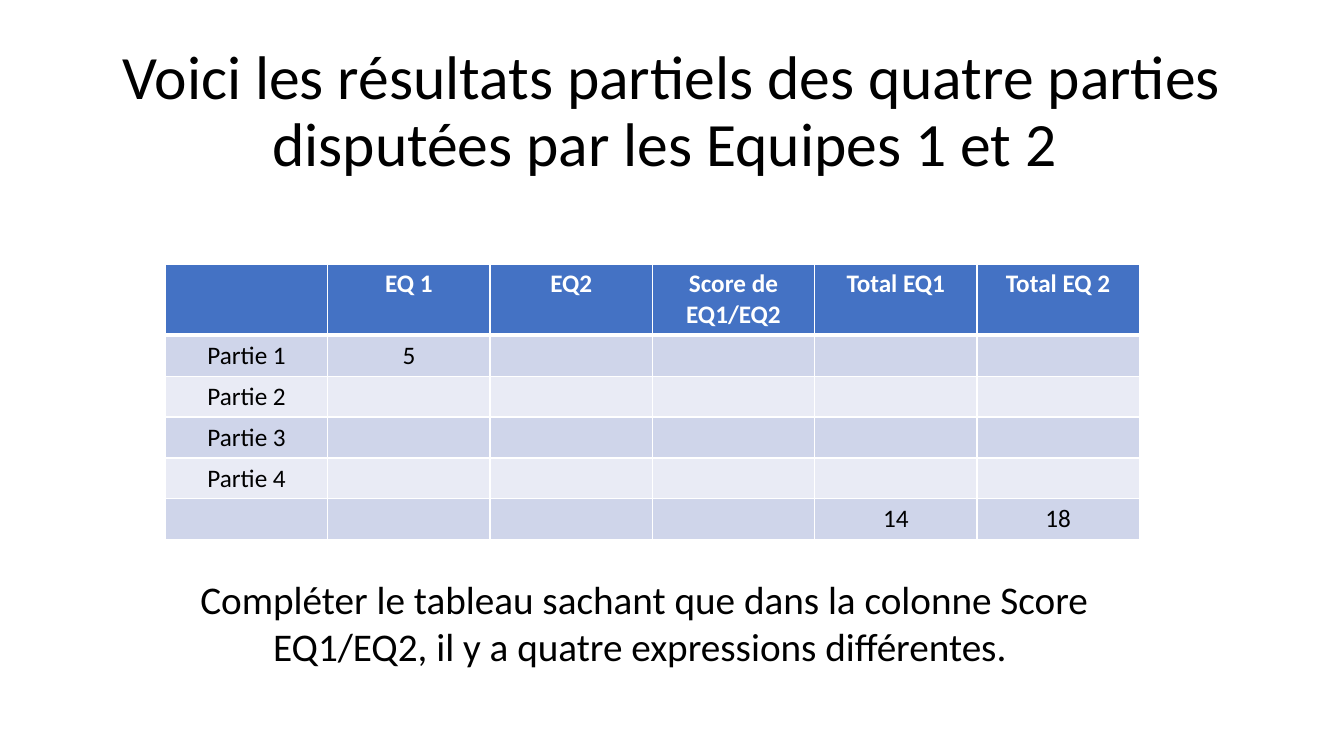
from lxml import etree
from pptx import Presentation
from pptx.dml.color import RGBColor
from pptx.enum.text import MSO_ANCHOR, PP_ALIGN
from pptx.oxml.ns import qn
from pptx.util import Cm, Pt

CENTER = PP_ALIGN.CENTER
TOP, MIDDLE = MSO_ANCHOR.TOP, MSO_ANCHOR.MIDDLE
BLACK, WHITE, HEADER_BLUE = "000000", "FFFFFF", "4472C4"
BANDS = ("CFD5EA", "E9EBF5")
HEADER_HEIGHT, ROW_HEIGHT = 1.8, 1.03

SCORES = [
    ["", "EQ 1", "EQ2", "Score de EQ1/EQ2", "Total EQ1", "Total EQ 2"],
    ["Partie 1", "5", "", "", "", ""],
    ["Partie 2", "", "", "", "", ""],
    ["Partie 3", "", "", "", "", ""],
    ["Partie 4", "", "", "", "", ""],
    ["", "", "", "", "14", "18"],
]


def color(hex_code):
    return RGBColor.from_string(hex_code)


def write(frame, text, size=18, ink=BLACK, bold=False, spacing=1.0):
    """Put one centred paragraph into a text frame."""
    paragraph = frame.paragraphs[0]
    paragraph.alignment = CENTER
    paragraph.line_spacing = spacing
    font = paragraph.font
    if text:
        run = paragraph.add_run()
        run.text = text
        font = run.font
    font.name, font.size, font.bold = "Calibri", Pt(size), bold
    font.color.rgb = color(ink)


def set_borders(cell, **widths):
    """Draw white cell borders, with widths in points by side: L, R, T, B."""
    properties = cell._tc.get_or_add_tcPr()
    for position, side in enumerate("LRTB"):
        line = etree.Element(qn(f"a:ln{side}"), w=str(Pt(widths.get(side, 1))))
        fill = etree.SubElement(line, qn("a:solidFill"))
        etree.SubElement(fill, qn("a:srgbClr"), val=WHITE)
        properties.insert(position, line)


class ScoreSlide:
    def __init__(self, presentation):
        self.slide = presentation.slides.add_slide(presentation.slide_layouts[6])

    def text(self, content, left, top, width, height, anchor=TOP, **style):
        box = self.slide.shapes.add_textbox(Cm(left), Cm(top), Cm(width), Cm(height))
        box.text_frame.word_wrap = True
        box.text_frame.vertical_anchor = anchor
        write(box.text_frame, content, **style)

    def table(self, rows, left, top, width):
        height = HEADER_HEIGHT + ROW_HEIGHT * (len(rows) - 1)
        table = self.slide.shapes.add_table(
            len(rows), len(rows[0]), Cm(left), Cm(top), Cm(width), Cm(height)).table
        for r, row in enumerate(rows):
            header = r == 0
            table.rows[r].height = Cm(HEADER_HEIGHT if header else ROW_HEIGHT)
            for c, content in enumerate(row):
                cell = table.cell(r, c)
                cell.fill.solid()
                cell.fill.fore_color.rgb = color(HEADER_BLUE if header else BANDS[(r - 1) % 2])
                set_borders(cell, T=3 if r == 1 else 1, B=3 if header else 1)
                write(cell.text_frame, content, ink=WHITE if header else BLACK, bold=header)


def main():
    presentation = Presentation()
    presentation.slide_width, presentation.slide_height = Cm(33.87), Cm(19.05)
    page = ScoreSlide(presentation)
    page.text("Voici les résultats partiels des quatre parties disputées par les Equipes 1 et 2 ",
              2.33, 1.01, 29.21, 3.68, anchor=MIDDLE, size=44, spacing=0.9)
    page.table(SCORES, 4.17, 6.65, 24.54)
    page.text("Compléter le tableau sachant que dans la colonne Score EQ1/EQ2, "
              "il y a quatre expressions différentes. ",
              4.17, 14.38, 24.13, 2.65, size=28)
    presentation.save("out.pptx")


if __name__ == "__main__":
    main()
